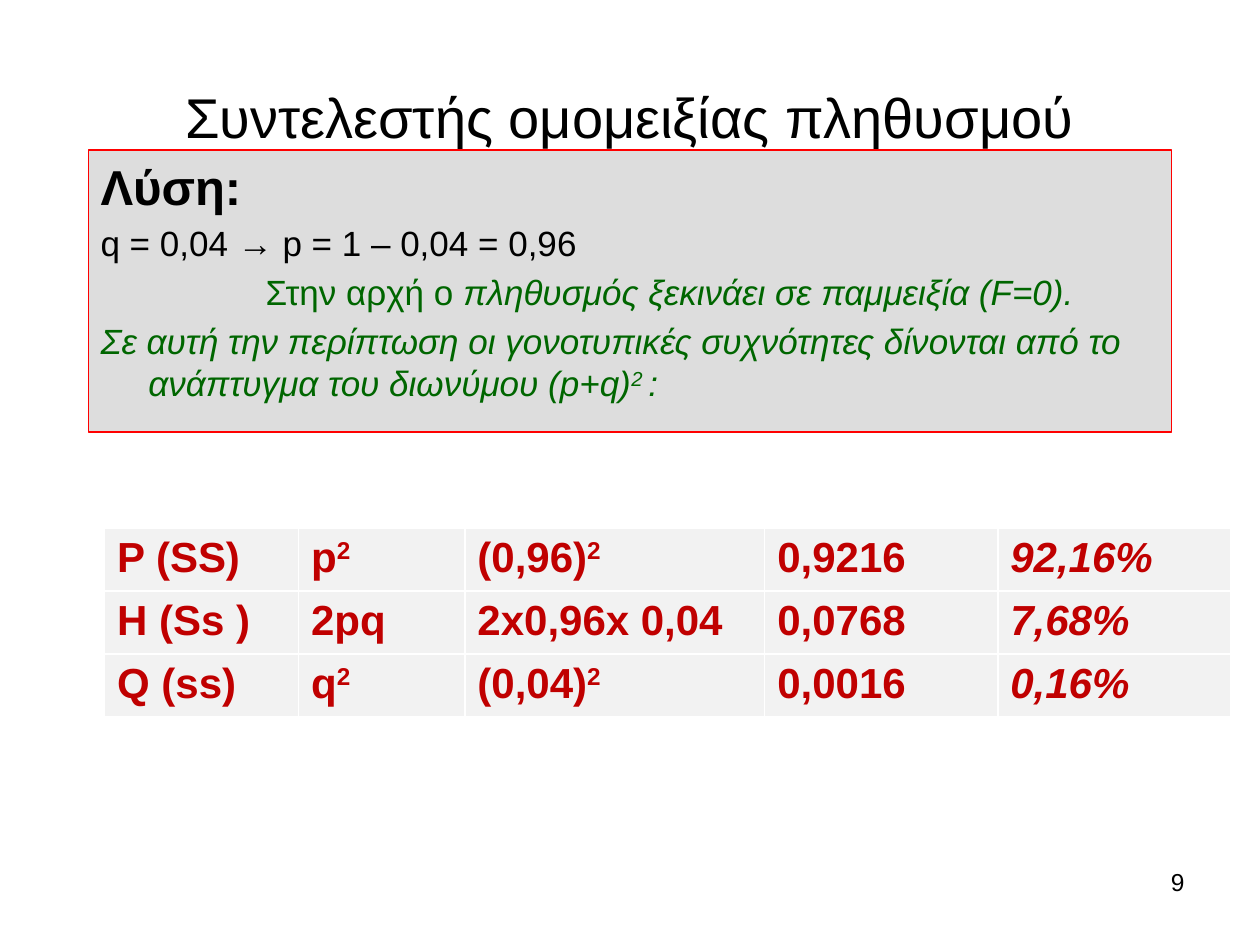
from dataclasses import dataclass

from pptx import Presentation
from pptx.dml.color import RGBColor
from pptx.enum.text import MSO_ANCHOR, PP_ALIGN
from pptx.util import Inches, Pt

COLORS = {"black": "000000", "green": "006600", "red": "C00000", "outline": "FF0000",
          "panel": "DDDDDD", "cell": "F2F2F2"}
FONT = "Arial"
COLS, ROWS = 100, 75  # slide grid
UNIT = Inches(10) // COLS


@dataclass
class Area:
    """A place on the slide, in grid columns and rows."""
    left: float
    top: float
    width: float
    height: float

    def emu(self) -> tuple:
        return tuple(round(v * UNIT) for v in (self.left, self.top, self.width, self.height))


@dataclass
class Run:
    text: str
    size: int = 20
    color: str = "black"
    bold: bool = False
    italic: bool = False
    raised: bool = False


def rgb(name: str) -> RGBColor:
    return RGBColor.from_string(COLORS[name])


def write(p, runs: list) -> None:
    for run in runs:
        r = p.add_run()
        r.text = run.text
        f = r.font
        f.name, f.size, f.bold, f.italic = FONT, Pt(run.size), run.bold, run.italic
        f.color.rgb = rgb(run.color)
        if run.raised:
            r._r.get_or_add_rPr().set("baseline", "30000")


def add_text(s, area: Area):
    sp = s.shapes.add_textbox(*area.emu())
    sp.text_frame.word_wrap = True
    return sp


def indent(p, left: float, first: float) -> None:
    pPr = p._p.get_or_add_pPr()
    pPr.set("marL", str(Inches(left)))
    pPr.set("indent", str(Inches(first)))


def add_solution(s, area: Area, paragraphs: list) -> None:
    sp = add_text(s, area)
    sp.fill.solid()
    sp.fill.fore_color.rgb = rgb("panel")
    sp.line.color.rgb = rgb("outline")
    sp.line.width = Pt(0.75)
    tf = sp.text_frame
    for i, (first, runs) in enumerate(paragraphs):
        p = tf.paragraphs[0] if i == 0 else tf.add_paragraph()
        indent(p, 0.38, first)
        p.space_before = Pt(runs[0].size * 0.2)
        write(p, runs)


def add_frequencies(s, area: Area, widths: list, rows: list) -> None:
    table = s.shapes.add_table(len(rows), len(widths), *area.emu()).table
    for col, width in zip(table.columns, widths):
        col.width = round(width * UNIT)
    for i, row in enumerate(rows):
        for j, text in enumerate(row):
            cell = table.cell(i, j)
            cell.fill.solid()
            cell.fill.fore_color.rgb = rgb("cell")
            base, _, power = text.partition("^")
            style = dict(size=24, color="red", bold=True, italic=j == len(row) - 1)
            runs = [Run(base, **style)]
            if power:
                runs.append(Run(power, raised=True, **style))
            write(cell.text_frame.paragraphs[0], runs)


SOLUTION = [
    (-0.38, [Run("Λύση:", 28, bold=True)]),
    (-0.38, [Run("q = 0,04 → p = 1 – 0,04 = 0,96")]),
    (0.93, [Run("Στην αρχή ο", color="green"),
            Run(" πληθυσμός ξεκινάει σε παμμειξία (F=0).", color="green", italic=True)]),
    (-0.38, [Run("Σε αυτή την περίπτωση οι γονοτυπικές συχνότητες δίνονται από το "
                 "ανάπτυγμα του διωνύμου (p+q)", color="green", italic=True),
             Run("2 ", color="green", italic=True, raised=True),
             Run(":", color="green", italic=True)]),
]
FREQUENCIES = [
    ["P (SS)", "p^2", "(0,96)^2", "0,9216", "92,16%"],
    ["H (Ss )", "2pq", "2x0,96x 0,04", "0,0768", "7,68%"],
    ["Q (ss)", "q^2", "(0,04)^2", "0,0016", "0,16%"],
]


def main() -> None:
    prs = Presentation()
    prs.slide_width, prs.slide_height = COLS * UNIT, ROWS * UNIT
    s = prs.slides.add_slide(prs.slide_layouts[5])

    # Title
    title = s.shapes.title
    title.left, title.top, title.width, title.height = Area(5, 3, 90, 12.5).emu()
    title.text_frame.vertical_anchor = MSO_ANCHOR.MIDDLE
    p = title.text_frame.paragraphs[0]
    p.alignment = PP_ALIGN.CENTER
    write(p, [Run("Συντελεστής ομομειξίας πληθυσμού", 32)])

    # Solution panel and genotype frequencies
    add_solution(s, Area(7, 11.9, 86, 22.4), SOLUTION)
    add_frequencies(s, Area(8.3, 41.9, 89.4, 14.1), [15.4, 13.2, 23.8, 18.5, 18.5], FREQUENCIES)

    # Page number
    p = add_text(s, Area(71.7, 68.3, 23.3, 5.2)).text_frame.paragraphs[0]
    p.alignment = PP_ALIGN.RIGHT
    write(p, [Run("9", 14)])

    prs.save("out.pptx")


if __name__ == "__main__":
    main()
